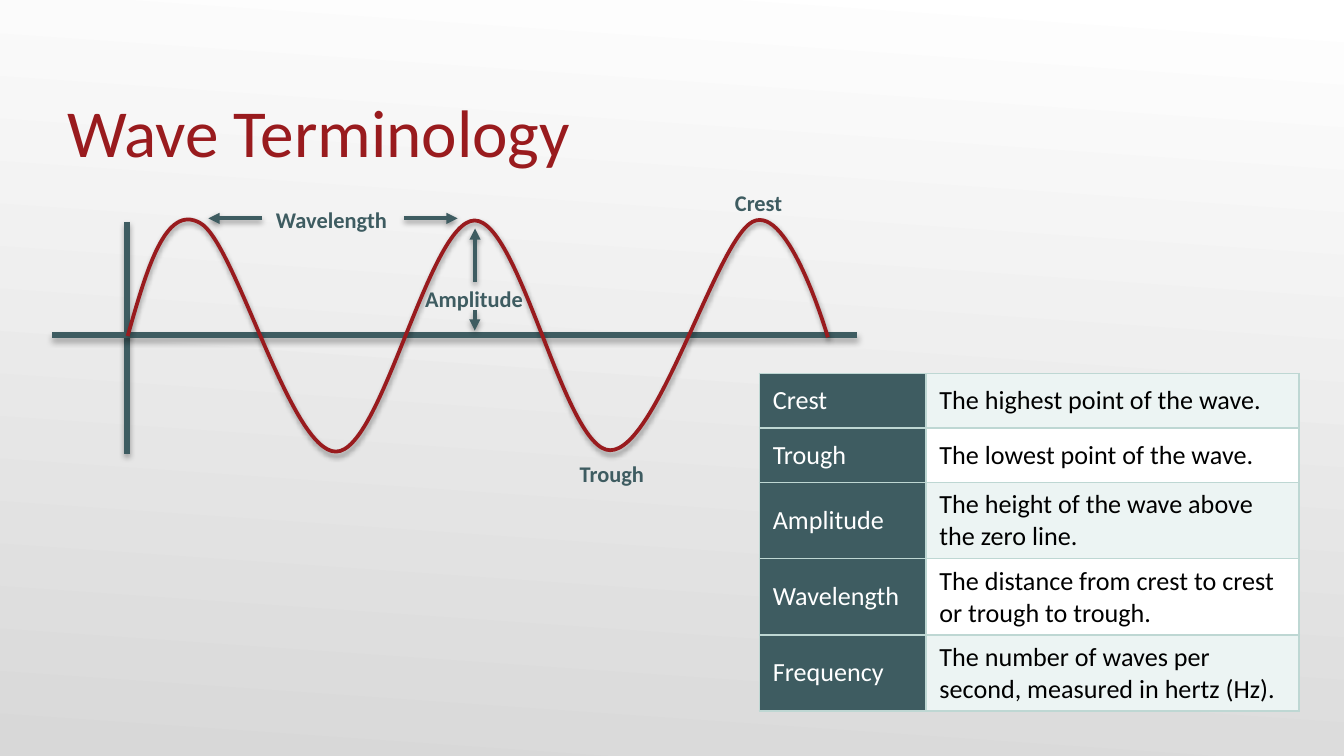
from lxml import etree
from pptx import Presentation
from pptx.dml.color import RGBColor
from pptx.enum.shapes import MSO_CONNECTOR
from pptx.enum.text import MSO_ANCHOR
from pptx.oxml.ns import qn
from pptx.util import Inches, Pt

STRAIGHT = MSO_CONNECTOR.STRAIGHT
TOP, MIDDLE, BOTTOM = MSO_ANCHOR.TOP, MSO_ANCHOR.MIDDLE, MSO_ANCHOR.BOTTOM

THEME = {
    "font": "Calibri",
    "red": "991B1E", "teal": "3E5C61", "border": "BED7D3",
    "white": "FFFFFF", "black": "000000", "band": "ECF4F3", "gray": "D8D8D8",
    "title": 36, "label": 12, "table": 14,
    "axis": 3, "curve": 2, "arrow": 2, "rule": 1,
}

# Content; lengths are grid units, 100 columns across the slide
COLUMNS, ROWS = 100, 56.25
TITLE = "Wave Terminology"
LABELS = [
    ("Trough", (42.15, 33.75, 7, 3)),
    ("Crest", (53.7, 13.6, 5.6, 3)),
    ("Amplitude", (30.65, 20.7, 9.4, 3)),
    ("Wavelength", (19.55, 14.85, 10.5, 3)),
]
AXES = [((9.45, 16.5), (9.45, 33.75)), ((63.8, 24.95), (3.9, 24.95))]
ARROWS = [
    ((35.35, 21), (35.35, 17)),
    ((35.33, 23.1), (35.33, 24.6)),
    ((30.05, 16.25), (34.05, 16.25)),
    ((19.5, 16.25), (15.5, 16.25)),
]
WAVE_START = (9.5, 25)
WAVE_CURVES = [  # two control points and an end point each
    ((10.9, 20.1), (12.3, 15.1), (14.9, 16.6)),
    ((17.5, 18), (21.6, 33.6), (25, 33.6)),
    ((28.4, 33.6), (31.9, 16.5), (35.3, 16.4)),
    ((38.7, 16.4), (42, 33.5), (45.4, 33.5)),
    ((48.9, 33.5), (53.3, 17.9), (56, 16.5)),
    ((58.7, 15.1), (61.6, 25.1), (61.6, 25.1)),
]
TERMS = [
    ("Crest", "The highest point of the wave."),
    ("Trough", "The lowest point of the wave."),
    ("Amplitude", "The height of the wave above the zero line."),
    ("Wavelength", "The distance from crest to crest or trough to trough."),
    ("Frequency", "The number of waves per second, measured in hertz (Hz)."),
]
TABLE_CORNER = (56.5, 27.8)
TABLE_COLUMNS = (12.4, 27.75)
TABLE_ROW = 4.05  # least height; longer definitions grow their row

deck = Presentation()
deck.slide_width, deck.slide_height = Inches(10), Inches(10 * ROWS / COLUMNS)
slide = deck.slides.add_slide(deck.slide_layouts[6])
UNIT = deck.slide_width / COLUMNS


def grid(*lengths):
    return [round(length * UNIT) for length in lengths]


def color(name):
    return RGBColor.from_string(THEME[name])


def write(frame, text, size="label", ink="teal", bold=False, anchor=TOP, wrap=False):
    frame.word_wrap = wrap
    frame.vertical_anchor = anchor
    run = frame.paragraphs[0].add_run()
    run.text = text
    run.font.name, run.font.size, run.font.bold = THEME["font"], Pt(THEME[size]), bold
    run.font.color.rgb = color(ink)


def stroke(part, ink, width, arrow=False, opacity=38, distance=1.6):
    part.line.color.rgb = color(ink)
    part.line.width = Pt(THEME[width])
    properties = part._element.spPr
    if arrow:
        etree.SubElement(properties.find(qn("a:ln")), qn("a:tailEnd"), type="triangle")
    effects = etree.SubElement(properties, qn("a:effectLst"))
    shadow = etree.SubElement(effects, qn("a:outerShdw"), blurRad=str(Pt(3.1)),
                              dist=str(Pt(distance)), dir="5400000", rotWithShape="0")
    ink_node = etree.SubElement(shadow, qn("a:srgbClr"), val=THEME["black"])
    etree.SubElement(ink_node, qn("a:alpha"), val=str(opacity * 1000))


def connect(start, end, width, **shadow):
    line = slide.shapes.add_connector(STRAIGHT, *grid(*start, *end))
    stroke(line, "teal", width, **shadow)


def add_curve(start, curves):
    """Join the end points, then bend each straight piece by its control points."""
    outline = slide.shapes.build_freeform(*grid(*start))
    outline.add_line_segments([grid(*curve[-1]) for curve in curves], close=False)
    shape = outline.convert_to_shape()
    for piece, curve in zip(list(shape._element.iter(qn("a:lnTo"))), curves):
        bend = etree.Element(qn("a:cubicBezTo"))
        for point in curve:
            x, y = grid(*point)
            etree.SubElement(bend, qn("a:pt"), x=str(x - shape.left), y=str(y - shape.top))
        piece.getparent().replace(piece, bend)
    return shape


def border(cell):
    properties = cell._tc.get_or_add_tcPr()
    for place, side in enumerate(("a:lnL", "a:lnR", "a:lnT", "a:lnB")):
        edge = etree.Element(qn(side), w=str(Pt(THEME["rule"])))
        fill = etree.SubElement(edge, qn("a:solidFill"))
        etree.SubElement(fill, qn("a:srgbClr"), val=THEME["border"])
        properties.insert(place, edge)


# Background
backdrop = slide.background.fill
backdrop.gradient()
backdrop.gradient_angle = 360 - 94
for stop, name, position in zip(backdrop.gradient_stops, ("white", "gray"), (0, 1)):
    stop.color.rgb = color(name)
    stop.position = position

# Title
heading = slide.shapes.add_textbox(*grid(5, 3.35, 90, 9.4)).text_frame
heading.margin_left = heading.margin_right = heading.margin_bottom = 0
write(heading, TITLE, size="title", ink="red", anchor=BOTTOM, wrap=True)

# Axes and wave
for start, end in AXES:
    connect(start, end, "axis", opacity=35, distance=1.8)
wave = add_curve(WAVE_START, WAVE_CURVES)
wave.fill.background()
stroke(wave, "red", "curve")

# Labels and arrows
for text, box in LABELS:
    write(slide.shapes.add_textbox(*grid(*box)).text_frame, text, bold=True)
for start, end in ARROWS:
    connect(start, end, "arrow", arrow=True)

# Table of terms
glossary = slide.shapes.add_table(
    len(TERMS), len(TABLE_COLUMNS),
    *grid(*TABLE_CORNER, sum(TABLE_COLUMNS), TABLE_ROW * len(TERMS))).table
glossary.first_row = glossary.horz_banding = False
for column, width in zip(glossary.columns, grid(*TABLE_COLUMNS)):
    column.width = width
for index, (row, entry) in enumerate(zip(glossary.rows, TERMS)):
    looks = (("teal", "white"), (("band", "white")[index % 2], "black"))
    for cell, text, (fill, ink) in zip(row.cells, entry, looks):
        cell.fill.solid()
        cell.fill.fore_color.rgb = color(fill)
        border(cell)
        write(cell.text_frame, text, size="table", ink=ink, wrap=True)
        cell.vertical_anchor = MIDDLE

deck.save("out.pptx")
